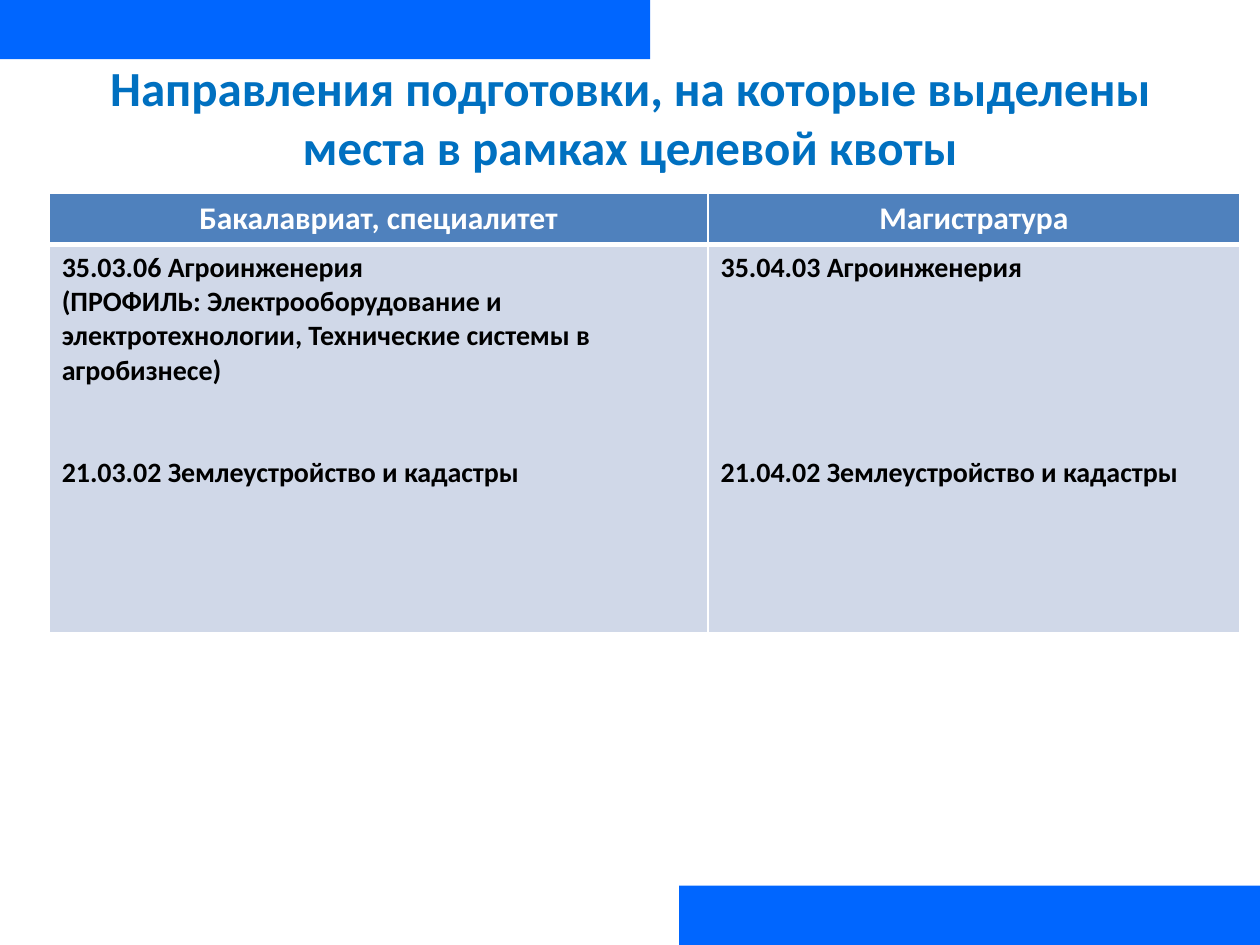
"""Build a slide listing the study programmes with places in the targeted quota."""
from lxml.etree import SubElement
from pptx import Presentation
from pptx.dml.color import RGBColor
from pptx.enum.shapes import MSO_SHAPE
from pptx.enum.text import MSO_ANCHOR, PP_ALIGN
from pptx.oxml.ns import qn
from pptx.util import Inches, Pt

TITLE = "Направления подготовки, на которые выделены места в рамках целевой квоты"
HEADERS = ["Бакалавриат, специалитет", "Магистратура"]
PROGRAMMES = [
    [
        ("35.03.06 Агроинженерия", 0),
        ("(ПРОФИЛЬ: Электрооборудование и электротехнологии, "
         "Технические системы в агробизнесе)", 0),
        ("21.03.02 Землеустройство и кадастры", 2),
    ],
    [
        ("35.04.03 Агроинженерия", 0),
        ("21.04.02 Землеустройство и кадастры", 5),
    ],
]
COLORS = {
    "title": "0070C0", "bar": "0066FF", "header": "4F81BD",
    "body": "D0D8E8", "white": "FFFFFF", "black": "000000",
}
SLIDE_WIDTH, SLIDE_HEIGHT = 10, 7.5
BAR_HEIGHT = 0.47
BAR_SPANS = [(0, 5.16, 0), (5.39, SLIDE_WIDTH - 5.39, SLIDE_HEIGHT - BAR_HEIGHT)]
COLUMNS = [5.23, 4.22]
ROWS = [0.41, 3.08]
LINE_PITCH = 19.5


def color(name):
    return RGBColor.from_string(COLORS[name])


def write(frame, lines, size, ink, align=PP_ALIGN.LEFT):
    for index, (text, skipped_lines) in enumerate(lines):
        para = frame.paragraphs[0] if index == 0 else frame.add_paragraph()
        para.alignment = align
        para.space_before = Pt(skipped_lines * LINE_PITCH)
        span = para.add_run()
        span.text = text
        span.font.name = "Calibri"
        span.font.size = Pt(size)
        span.font.bold = True
        span.font.color.rgb = color(ink)


def style_cell(cell, fill, bottom):
    properties = cell._tc.get_or_add_tcPr()
    for side, points in (("L", 1), ("R", 1), ("T", 1), ("B", bottom)):
        line = SubElement(properties, qn(f"a:ln{side}"), w=str(Pt(points)))
        solid = SubElement(line, qn("a:solidFill"))
        SubElement(solid, qn("a:srgbClr"), val=COLORS["white"])
    cell.fill.solid()
    cell.fill.fore_color.rgb = color(fill)


def add_bars(page):
    for left, width, top in BAR_SPANS:
        bar = page.shapes.add_shape(
            MSO_SHAPE.RECTANGLE, Inches(left), Inches(top), Inches(width), Inches(BAR_HEIGHT))
        bar.shadow.inherit = False
        bar.fill.solid()
        bar.fill.fore_color.rgb = color("bar")
        bar.line.fill.background()


def add_programmes(page):
    table = page.shapes.add_table(
        len(ROWS), len(COLUMNS), Inches(0.39), Inches(1.53),
        Inches(sum(COLUMNS)), Inches(sum(ROWS))).table
    table.horz_banding = False
    for row, height in zip(table.rows, ROWS):
        row.height = Inches(height)
    for index, width in enumerate(COLUMNS):
        table.columns[index].width = Inches(width)
        header, body = table.cell(0, index), table.cell(1, index)
        style_cell(header, "header", bottom=3)
        style_cell(body, "body", bottom=1)
        write(header.text_frame, [(HEADERS[index], 0)], 18, "white", PP_ALIGN.CENTER)
        write(body.text_frame, PROGRAMMES[index], 16, "black")


def main():
    deck = Presentation()
    deck.slide_width, deck.slide_height = Inches(SLIDE_WIDTH), Inches(SLIDE_HEIGHT)
    page = deck.slides.add_slide(deck.slide_layouts[5])
    title = page.shapes.title
    title.left, title.top = Inches(0.5), Inches(0.3)
    title.width, title.height = Inches(9), Inches(1.25)
    title.text_frame.vertical_anchor = MSO_ANCHOR.MIDDLE
    write(title.text_frame, [(TITLE, 0)], 28, "title", PP_ALIGN.CENTER)
    add_bars(page)
    add_programmes(page)
    deck.save("out.pptx")


if __name__ == "__main__":
    main()
